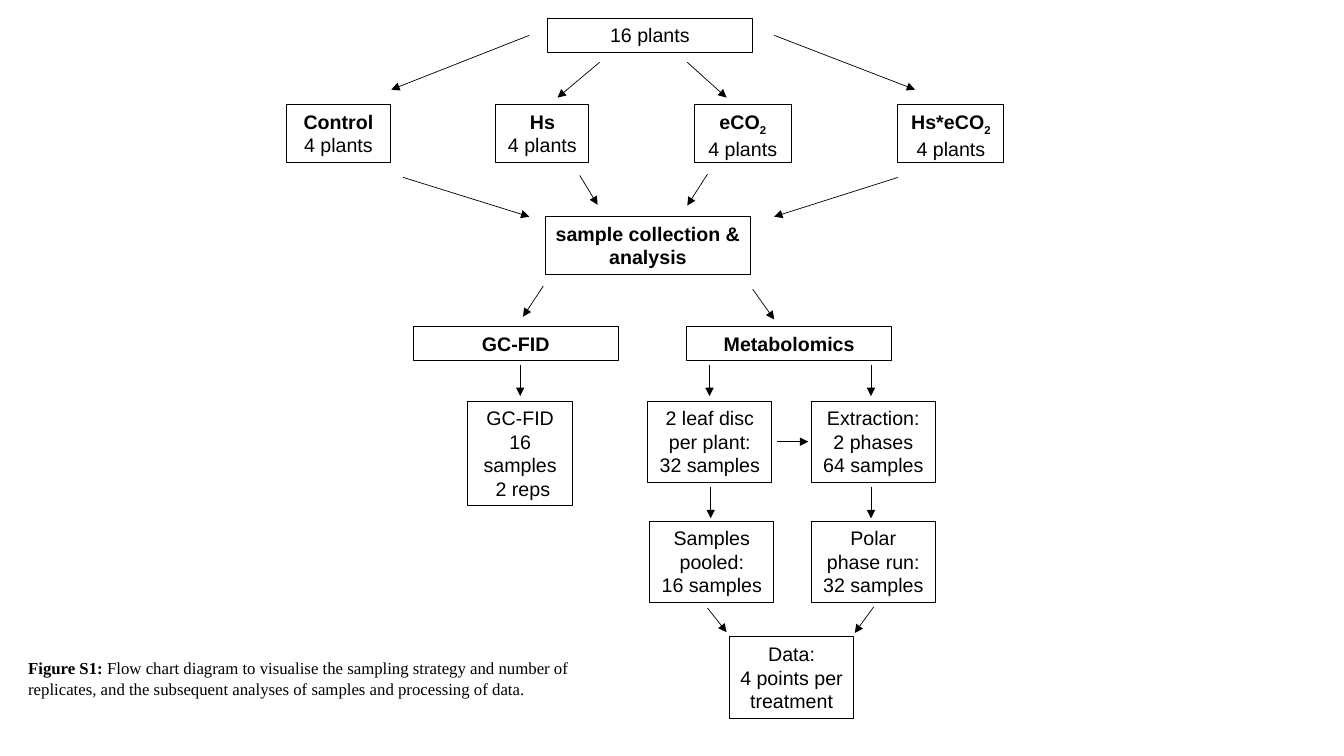
from lxml.etree import SubElement
from pptx import Presentation
from pptx.dml.color import RGBColor
from pptx.enum.shapes import MSO_CONNECTOR, MSO_SHAPE
from pptx.enum.text import MSO_ANCHOR, MSO_AUTO_SIZE, PP_ALIGN
from pptx.oxml.ns import qn
from pptx.util import Cm, Pt

BLACK = "000000"
WHITE = "FFFFFF"
WIDE, HEADER_HEIGHT = 5.18, 0.86
STEP_WIDTH, STEP_HEIGHT = 3.12, 2.06
TREATMENT_TOP, TREATMENT_HEIGHT = 2.64, 1.45
METHOD_TOP, STEP_TOP, POOL_TOP = 8.23, 10.11, 13.13

TREATMENTS = [
    (7.21, 2.64, "Control", ""),
    (12.5, 2.34, "Hs", ""),
    (17.5, 2.44, "eCO", "2"),
    (22.63, 2.67, "Hs*eCO", "2"),
]
HEADERS = [
    (13.79, 0.46, HEADER_HEIGHT, "16 plants", False),
    (13.74, 5.46, 1.45, "sample collection & analysis", True),
    (10.41, METHOD_TOP, HEADER_HEIGHT, "GC-FID", True),
    (17.3, METHOD_TOP, HEADER_HEIGHT, "Metabolomics", True),
]
STEPS = [
    (11.79, STEP_TOP, 2.64, 2.64, ["GC-FID", "16 samples", " 2 reps"]),
    (16.33, STEP_TOP, STEP_WIDTH, STEP_HEIGHT, ["2 leaf disc per plant:", "32 samples"]),
    (20.45, STEP_TOP, STEP_WIDTH, STEP_HEIGHT, ["Extraction: 2 phases", "64 samples"]),
    (16.38, POOL_TOP, STEP_WIDTH, STEP_HEIGHT, ["Samples pooled:", "16 samples"]),
    (20.45, POOL_TOP, STEP_WIDTH, STEP_HEIGHT, ["Polar phase run:", "32 samples"]),
    (18.39, 16.05, STEP_WIDTH, STEP_HEIGHT, ["Data:", "4 points per treatment"]),
]
SLANTED_ARROWS = [
    (13.34, 0.89, 9.86, 2.26),
    (19.51, 0.89, 23.06, 2.26),
    (15.11, 1.57, 14.05, 2.46),
    (17.32, 1.57, 18.31, 2.46),
    (10.16, 4.47, 13.34, 5.46),
    (22.63, 4.47, 19.51, 5.46),
    (14.61, 4.42, 15.06, 5.16),
    (17.83, 4.39, 17.32, 5.18),
    (13.69, 7.21, 13.18, 7.98),
    (18.97, 7.29, 19.51, 8.05),
    (17.83, 15.32, 18.31, 15.93),
    (22.02, 15.29, 21.54, 15.95),
]
STRAIGHT_ARROWS = [(13.11, 9.19), (17.88, 9.19), (21.95, 9.19), (17.91, 12.27), (21.95, 12.27)]
ARROW_LENGTH = 0.79


def color(value):
    """Turn a hex string into a colour."""
    return RGBColor.from_string(value)


def add_run(paragraph, text, bold=False, subscript=False, font="Arial", size=14):
    """Append one styled run to a paragraph."""
    run = paragraph.add_run()
    run.text = text
    run.font.name = font
    run.font.size = Pt(size)
    run.font.bold = bold
    run.font.color.rgb = color(BLACK)
    if subscript:
        run._r.get_or_add_rPr().set("baseline", "-25000")


def add_rectangle(slide, left, top, width, height):
    """Add a plain rectangle ready for text and return it."""
    shape = slide.shapes.add_shape(
        MSO_SHAPE.RECTANGLE, Cm(left), Cm(top), Cm(width), Cm(height))
    shape.shadow.inherit = False
    shape.text_frame.word_wrap = True
    shape.text_frame.auto_size = MSO_AUTO_SIZE.SHAPE_TO_FIT_TEXT
    shape.text_frame.vertical_anchor = MSO_ANCHOR.TOP
    return shape


def add_box(slide, left, top, width, height, lines):
    """Add an outlined box whose lines are lists of (text, bold, subscript)."""
    shape = add_rectangle(slide, left, top, width, height)
    shape.fill.background()
    shape.line.color.rgb = color(BLACK)
    shape.line.width = Pt(0.75)
    frame = shape.text_frame
    for index, runs in enumerate(lines):
        paragraph = frame.add_paragraph() if index else frame.paragraphs[0]
        paragraph.alignment = PP_ALIGN.CENTER
        for text, bold, subscript in runs:
            add_run(paragraph, text, bold, subscript)


def add_arrow(slide, start_x, start_y, end_x, end_y):
    """Add a thin line with a triangle at its end."""
    arrow = slide.shapes.add_connector(
        MSO_CONNECTOR.STRAIGHT, Cm(start_x), Cm(start_y), Cm(end_x), Cm(end_y))
    arrow.line.color.rgb = color(BLACK)
    arrow.line.width = Pt(0.5)
    SubElement(arrow.line._get_or_add_ln(), qn("a:tailEnd"), type="triangle")
    SubElement(arrow._element.spPr, qn("a:effectLst"))


def add_caption(slide):
    """Add the figure caption."""
    shape = add_rectangle(slide, 0.46, 16.41, 15.42, 1.35)
    shape.fill.solid()
    shape.fill.fore_color.rgb = color(WHITE)
    shape.line.fill.background()
    paragraph = shape.text_frame.paragraphs[0]
    paragraph.alignment = PP_ALIGN.LEFT
    paragraph.line_spacing = 1.07
    paragraph.space_after = Pt(8)
    add_run(paragraph, "Figure S1: ", bold=True, font="Times New Roman", size=12)
    add_run(
        paragraph,
        "Flow chart diagram to visualise the sampling strategy and number of "
        "replicates, and the subsequent analyses of samples and processing of data.",
        font="Times New Roman", size=12)


def main():
    """Build the sampling flow chart."""
    presentation = Presentation()
    presentation.slide_width = Cm(33.87)
    presentation.slide_height = Cm(19.05)
    slide = presentation.slides.add_slide(presentation.slide_layouts[6])

    for left, top, height, text, bold in HEADERS:
        add_box(slide, left, top, WIDE, height, [[(text, bold, False)]])
    for left, width, name, subscript in TREATMENTS:
        title = [(name, True, False)]
        if subscript:
            title.append((subscript, True, True))
        add_box(slide, left, TREATMENT_TOP, width, TREATMENT_HEIGHT,
                [title, [("4 plants", False, False)]])
    for left, top, width, height, lines in STEPS:
        add_box(slide, left, top, width, height,
                [[(line, False, False)] for line in lines])

    for ends in SLANTED_ARROWS:
        add_arrow(slide, *ends)
    for x, top in STRAIGHT_ARROWS:
        add_arrow(slide, x, top, x, top + ARROW_LENGTH)
    add_arrow(slide, 19.58, 11.13, 19.58 + ARROW_LENGTH, 11.13)

    add_caption(slide)
    presentation.save("out.pptx")


if __name__ == "__main__":
    main()
